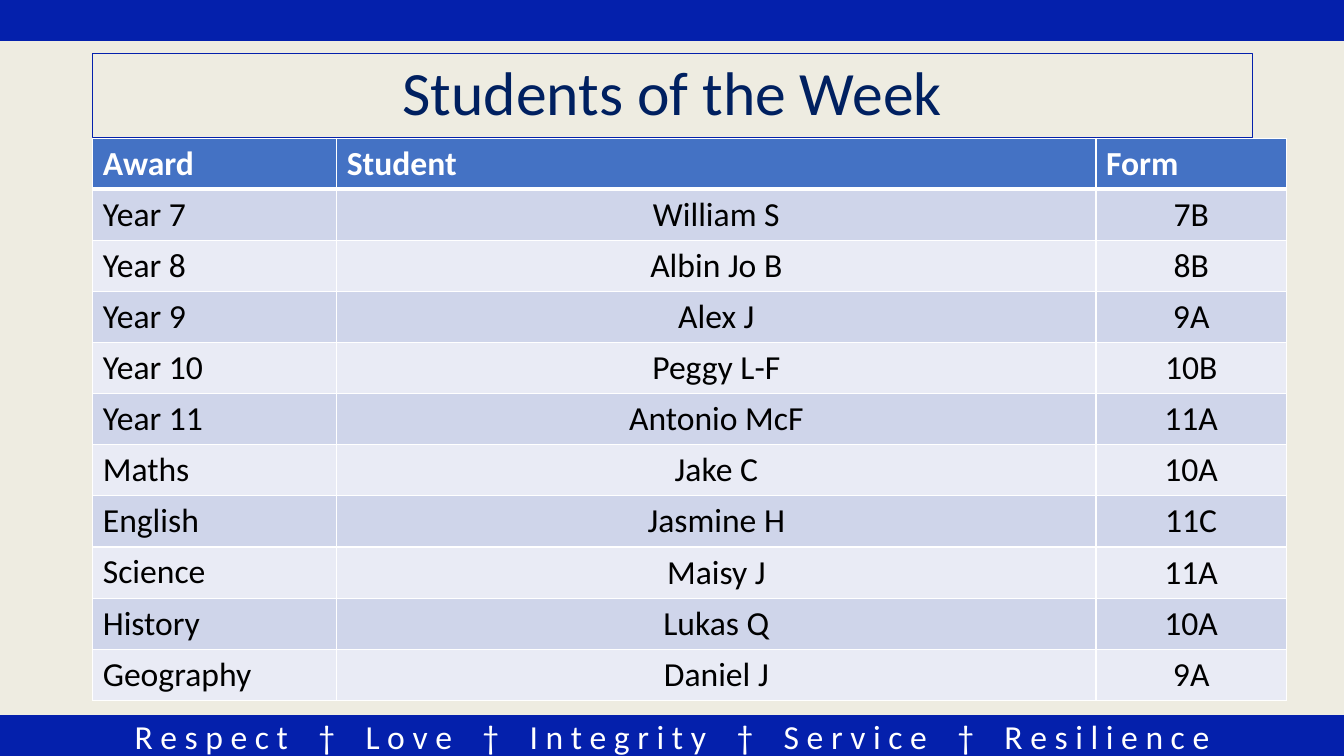
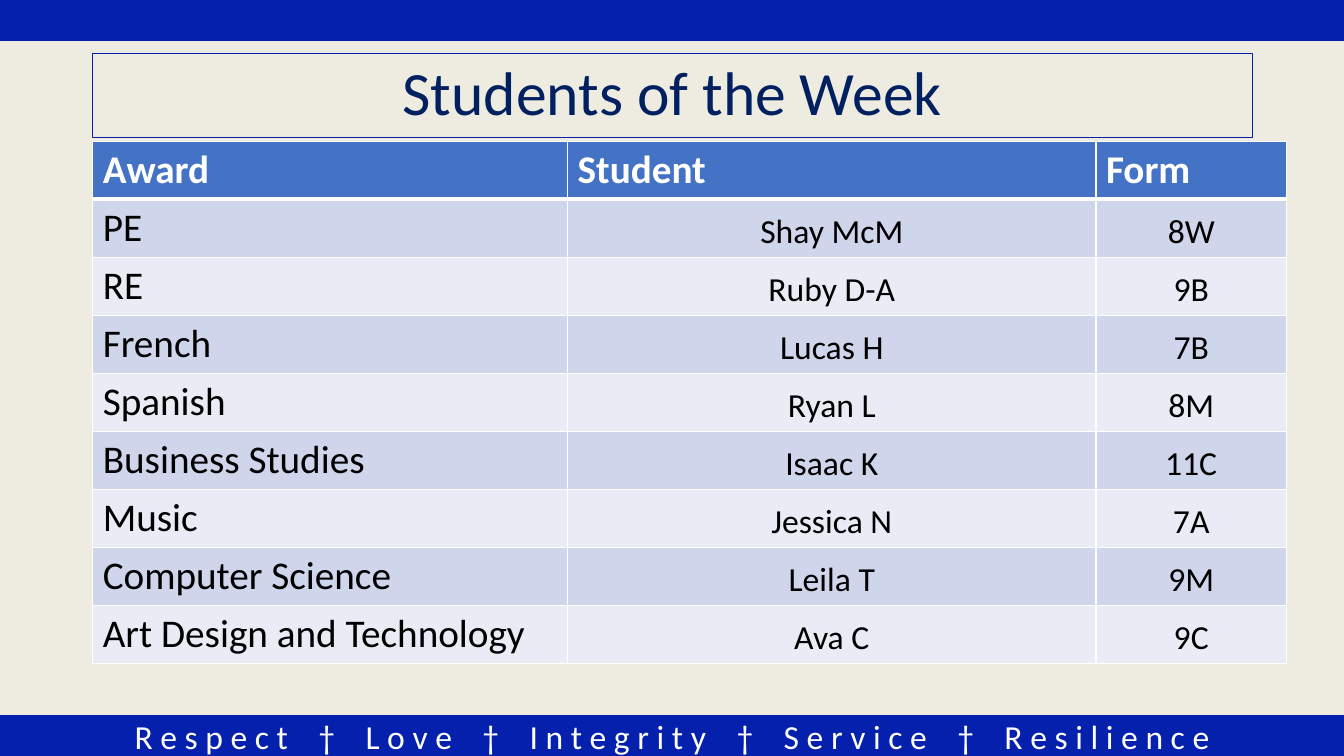
from pptx import Presentation
from pptx.dml.color import RGBColor
from pptx.enum import shapes, text
from pptx.oxml import parse_xml
from pptx.oxml.ns import nsdecls
from pptx.util import Inches, Pt

VALUES = ["Respect", "Love", "Integrity", "Service", "Resilience"]
HEADINGS = ["Award", "Student", "Form"]
SLIDES = [
    {"top": 1.37, "row": 0.5, "size": 24, "cols": [2.42, 7.53, 1.89], "awards": [
        ("Year 7", "William S", "7B"),
        ("Year 8", "Albin Jo B", "8B"),
        ("Year 9", "Alex J", "9A"),
        ("Year 10", "Peggy L-F", "10B"),
        ("Year 11", "Antonio McF", "11A"),
        ("Maths", "Jake C", "10A"),
        ("English", "Jasmine H", "11C"),
        ("Science", "Maisy J", "11A"),
        ("History", "Lukas Q", "10A"),
        ("Geography", "Daniel J", "9A"),
    ]},
    {"top": 1.4, "row": 0.57, "size": 28, "cols": [4.71, 5.24, 1.89], "awards": [
        ("PE", "Shay McM", "8W"),
        ("RE", "Ruby D-A", "9B"),
        ("French", "Lucas H", "7B"),
        ("Spanish", "Ryan L", "8M"),
        ("Business Studies", "Isaac K", "11C"),
        ("Music", "Jessica N", "7A"),
        ("Computer Science", "Leila T", "9M"),
        ("Art Design and Technology", "Ava C", "9C"),
    ]},
]

FONT = "Calibri"
CREAM = RGBColor(0xEE, 0xEC, 0xE1)
ROYAL = RGBColor(0x04, 0x20, 0xAC)
NAVY = RGBColor(0x00, 0x20, 0x60)
HEADER = RGBColor(0x44, 0x72, 0xC4)
BANDS = [RGBColor(0xE9, 0xEB, 0xF5), RGBColor(0xCF, 0xD5, 0xEA)]
WHITE = RGBColor(0xFF, 0xFF, 0xFF)
BLACK = RGBColor(0x00, 0x00, 0x00)

WIDTH, HEIGHT, BAND = 13.33, 7.5, 0.4
LEFT = 0.92
NAME_SIZE = 24
GAP_SPACING = 1627  # widens one space to the width of four, in 1/100 pt


def add_run(p, words, size, colour, bold=False):
    r = p.add_run()
    r.text = words
    r.font.name, r.font.size, r.font.bold = FONT, Pt(size), bold
    r.font.color.rgb = colour
    return r


def add_band(s, top):
    band = s.shapes.add_shape(shapes.MSO_SHAPE.RECTANGLE, 0, Inches(top),
                              Inches(WIDTH), Inches(BAND))
    band.shadow.inherit = False
    band.fill.solid()
    band.fill.fore_color.rgb = band.line.color.rgb = ROYAL
    band.line.width = Pt(1)
    return band


def add_motto(band):
    band.text_frame.vertical_anchor = text.MSO_ANCHOR.MIDDLE
    p = band.text_frame.paragraphs[0]
    p.alignment = text.PP_ALIGN.CENTER
    for i, value in enumerate(VALUES):
        if i:
            for part in (" ", "†", " "):
                r = add_run(p, part, 24, WHITE)
                if part == " ":
                    r.font._element.set("spc", str(GAP_SPACING))
        add_run(p, " ".join(value), 24, WHITE)


def move_to_master(prs, bands):
    """Put the bands behind everything else on the master."""
    tree = prs.slide_master.shapes.element
    for i, band in enumerate(bands):
        band.element.nvSpPr.cNvPr.set("id", str(100 + i))
        tree.insert(2 + i, band.element)


def set_title(s):
    title = s.shapes.title
    title.left, title.top = Inches(LEFT), Inches(0.53)
    title.width, title.height = Inches(11.5), Inches(0.83)
    title.line.color.rgb = ROYAL
    title.line.width = Pt(0.75)
    title.text_frame.vertical_anchor = text.MSO_ANCHOR.MIDDLE
    p = title.text_frame.paragraphs[0]
    p.alignment, p.line_spacing = text.PP_ALIGN.CENTER, 0.9
    add_run(p, "Students of the Week", 44, NAVY)


def set_borders(cell, row):
    widths = {"L": 1, "R": 1, "T": 3 if row == 1 else 1, "B": 3 if row == 0 else 1}
    for side, width in widths.items():
        cell._tc.get_or_add_tcPr().append(parse_xml(
            f'<a:ln{side} {nsdecls("a")} w="{Pt(width)}"><a:solidFill>'
            f'<a:srgbClr val="{WHITE}"/></a:solidFill></a:ln{side}>'))


def fill_cell(cell, row, col, words, size):
    set_borders(cell, row)
    cell.fill.solid()
    cell.fill.fore_color.rgb = BANDS[row % 2] if row else HEADER
    p = cell.text_frame.paragraphs[0]
    if row and col:
        cell.vertical_anchor = text.MSO_ANCHOR.BOTTOM
        cell.margin_left = cell.margin_right = cell.margin_top = Inches(0.01)
        cell.margin_bottom = Inches(0.05)
        p.alignment, size = text.PP_ALIGN.CENTER, NAME_SIZE
    add_run(p, words, size, BLACK if row else WHITE, bold=not row)


def add_awards(s, top, row, size, cols, awards):
    rows = [HEADINGS, *awards]
    table = s.shapes.add_table(len(rows), len(cols), Inches(LEFT), Inches(top),
                               Inches(sum(cols)), Inches(row * len(rows))).table
    for column, width in zip(table.columns, cols):
        column.width = Inches(width)
    for i, entries in enumerate(rows):
        table.rows[i].height = Inches(row)
        for j, words in enumerate(entries):
            fill_cell(table.cell(i, j), i, j, words, size)


def main():
    prs = Presentation()
    prs.slide_width, prs.slide_height = Inches(WIDTH), Inches(HEIGHT)
    background = prs.slide_master.background.fill
    background.solid()
    background.fore_color.rgb = CREAM
    title_only = prs.slide_layouts[5]
    for i, content in enumerate(SLIDES):
        s = prs.slides.add_slide(title_only)
        if i == 0:
            bands = [add_band(s, HEIGHT - BAND), add_band(s, 0)]
            add_motto(bands[0])
            move_to_master(prs, bands)
        set_title(s)
        add_awards(s, **content)
    prs.save("out.pptx")


if __name__ == "__main__":
    main()
